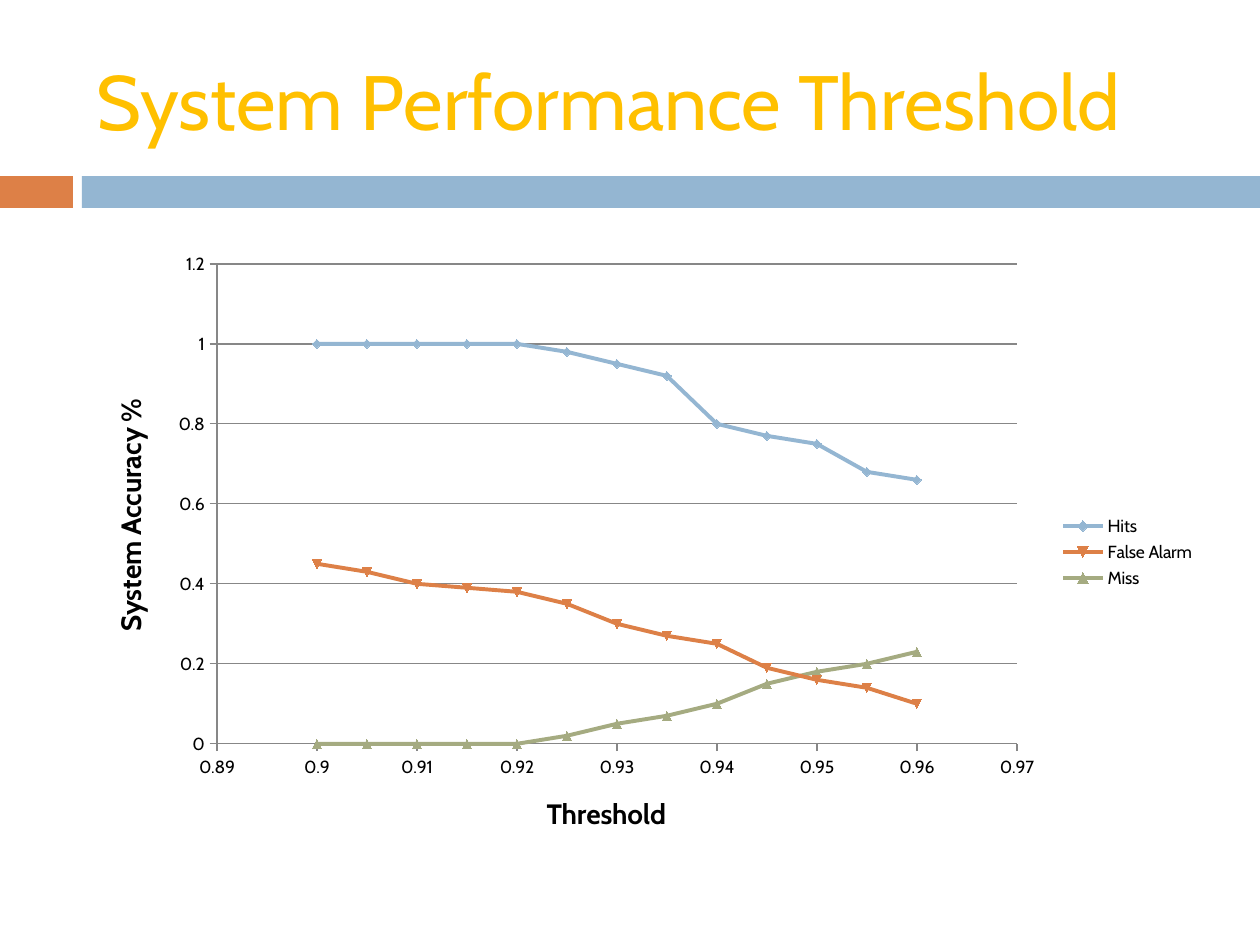
from lxml import etree
from pptx import Presentation, util as u
from pptx.chart.data import XyChartData
from pptx.dml.color import RGBColor
from pptx.enum import chart as ch, shapes, text
from pptx.oxml.ns import qn

PX = 914400 / 126
FONT = "Cabin"
TITLE = "System Performance Threshold"
BARS = [(0, 73, "DD8047"), (82, 1178, "94B6D2")]
SERIES = [
    ("Hits", "94B6D2", [1, 1, 1, 1, 1, 0.98, 0.95, 0.92, 0.8, 0.77, 0.75, 0.68, 0.66]),
    ("False Alarm", "DD8047", [0.45, 0.43, 0.4, 0.39, 0.38, 0.35, 0.3, 0.27, 0.25, 0.19, 0.16, 0.14, 0.1]),
    ("Miss", "A5AB81", [0, 0, 0, 0, 0, 0.02, 0.05, 0.07, 0.1, 0.15, 0.18, 0.2, 0.23]),
]
X_START, X_STEP = 0.9, 0.005
CHART = (84, 242, 1124, 620)
PLOT = (217, 264, 800, 480)


def emu(*px):
    return [u.Emu(round(v * PX)) for v in px]


def rgb(color):
    return RGBColor.from_string(color)


def put_text(tf, words, size, color="000000", bold=False, align=None):
    p = tf.paragraphs[0]
    p.alignment = align
    r = p.add_run()
    r.text = words
    r.font.name, r.font.size, r.font.bold = FONT, u.Pt(size), bold
    r.font.color.rgb = rgb(color)


def style_line(line, color, width):
    line.color.rgb = rgb(color)
    line.width = u.Pt(width)


def style_axis(axis, title, low, high, step):
    axis.minimum_scale, axis.maximum_scale, axis.major_unit = low, high, step
    axis.major_tick_mark = ch.XL_TICK_MARK.OUTSIDE
    axis.minor_tick_mark = ch.XL_TICK_MARK.NONE
    axis.tick_labels.number_format = "General"
    axis.tick_labels.number_format_is_linked = False
    style_line(axis.format.line, "878787", 0.75)
    put_text(axis.axis_title.text_frame, title, 16, bold=True)


def place_plot(chart):
    area = chart._chartSpace.chart.plotArea
    for old in area.findall(qn("c:layout")):
        area.remove(old)
    layout = etree.Element(qn("c:layout"))
    area.insert(0, layout)
    manual = etree.SubElement(layout, qn("c:manualLayout"))
    left, top, width, height = CHART
    x, y, w, h = PLOT
    values = [("layoutTarget", "inner"), ("xMode", "edge"), ("yMode", "edge"),
              ("x", (x - left) / width), ("y", (y - top) / height),
              ("w", w / width), ("h", h / height)]
    for tag, value in values:
        etree.SubElement(manual, qn("c:" + tag)).set("val", str(value))


def add_chart(s):
    data = XyChartData()
    for name, _, values in SERIES:
        points = data.add_series(name)
        for i, value in enumerate(values):
            points.add_data_point(round(X_START + i * X_STEP, 3), value)
    chart = s.shapes.add_chart(ch.XL_CHART_TYPE.XY_SCATTER_LINES, *emu(*CHART), data).chart
    chart.has_title = False
    chart.font.name, chart.font.size = FONT, u.Pt(10)
    chart.font.color.rgb = rgb("000000")
    chart.has_legend = True
    chart.legend.position = ch.XL_LEGEND_POSITION.RIGHT
    chart.legend.include_in_layout = False
    plot = chart.plots[0]
    plot.vary_by_categories = False
    for series, (_, color, _) in zip(plot.series, SERIES):
        series.smooth = False
        style_line(series.format.line, color, 2.25)
        series.marker.style = ch.XL_MARKER_STYLE.AUTOMATIC
        series.marker.size = 5
        series.marker.format.fill.solid()
        series.marker.format.fill.fore_color.rgb = rgb(color)
        style_line(series.marker.format.line, color, 0.75)
    style_axis(chart.category_axis, "Threshold", 0.89, 0.97, 0.01)
    style_axis(chart.value_axis, "System Accuracy %", 0, 1.2, 0.2)
    chart.category_axis.has_major_gridlines = False
    chart.value_axis.has_major_gridlines = True
    style_line(chart.value_axis.major_gridlines.format.line, "878787", 0.75)
    place_plot(chart)


def main():
    prs = Presentation()
    prs.slide_width, prs.slide_height = emu(1260, 945)
    s = prs.slides.add_slide(prs.slide_layouts[5])
    for left, width, color in BARS:
        sp = s.shapes.add_shape(shapes.MSO_SHAPE.RECTANGLE, *emu(left, 176, width, 32))
        sp.shadow.inherit = False
        sp.fill.solid()
        sp.fill.fore_color.rgb = rgb(color)
        sp.line.fill.background()
    title = s.shapes.title
    title.left, title.top, title.width, title.height = emu(84, 32, 1124, 136)
    tf = title.text_frame
    tf.word_wrap = True
    tf.vertical_anchor = text.MSO_ANCHOR.MIDDLE
    put_text(tf, TITLE, 44, "FFC000", align=text.PP_ALIGN.LEFT)
    add_chart(s)
    prs.save("out.pptx")


if __name__ == "__main__":
    main()
